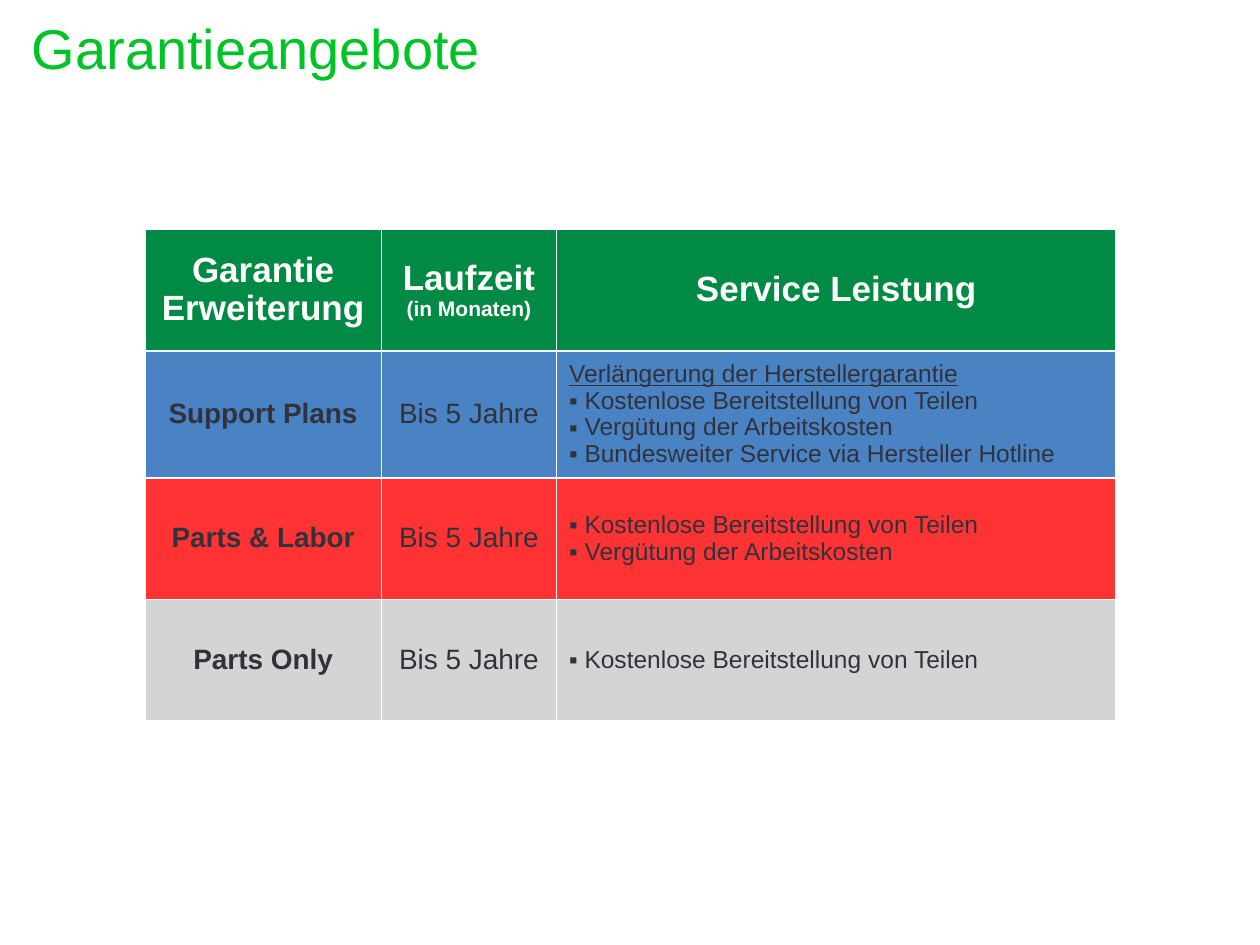
from pptx import Presentation
from pptx.dml.color import RGBColor
from pptx.enum.text import MSO_ANCHOR, PP_ALIGN
from pptx.oxml.ns import qn
from pptx.util import Cm, Pt
from lxml import etree

MIDDLE = MSO_ANCHOR.MIDDLE
CENTER, LEFT = PP_ALIGN.CENTER, PP_ALIGN.LEFT

LIME = RGBColor(0x00, 0xC4, 0x25)
GREEN = RGBColor(0x00, 0x8A, 0x44)
BLUE = RGBColor(0x1C, 0x64, 0xB4)
RED = RGBColor(0xFF, 0x00, 0x00)
GRAY = RGBColor(0xCA, 0xCA, 0xCA)
WHITE = RGBColor(0xFF, 0xFF, 0xFF)
DARK = RGBColor(0x32, 0x32, 0x3C)

FONT = "Arial"
LINE_SPACING = 0.97
BULLET_INDENT = Cm(0.31)

STYLES = {
    "title": {"size": Pt(32), "color": LIME},
    "header": {"size": Pt(20), "color": WHITE, "bold": True, "align": CENTER},
    "unit": {"size": Pt(12), "color": WHITE, "bold": True, "align": CENTER},
    "plan": {"size": Pt(16), "color": DARK, "bold": True, "align": CENTER},
    "term": {"size": Pt(16), "color": DARK, "align": CENTER},
    "heading": {"size": Pt(14), "color": DARK, "underline": True},
    "bullet": {"size": Pt(14), "color": DARK},
}

TITLE = "Garantieangebote"
HEADERS = [
    [("header", "Garantie"), ("header", "Erweiterung")],
    [("header", "Laufzeit"), ("unit", "(in Monaten)")],
    [("header", "Service Leistung")],
]
TERM = "Bis 5 Jahre"
PARTS = ("bullet", "Kostenlose Bereitstellung von Teilen")
LABOR = ("bullet", "Vergütung der Arbeitskosten")
OFFERS = [
    ("Support Plans", BLUE, [
        ("heading", "Verlängerung der Herstellergarantie"),
        PARTS,
        LABOR,
        ("bullet", "Bundesweiter Service via Hersteller Hotline"),
    ]),
    ("Parts & Labor", RED, [PARTS, LABOR]),
    ("Parts Only", GRAY, [PARTS]),
]
COLUMN_WIDTHS = [Cm(4.77), Cm(3.53), Cm(11.28)]
ROW_HEIGHT = Cm(2.45)


def add_bullet(paragraph):
    properties = paragraph._p.get_or_add_pPr()
    properties.set("marL", str(BULLET_INDENT))
    properties.set("indent", str(-BULLET_INDENT))
    etree.SubElement(properties, qn("a:buFont"), typeface=FONT)
    etree.SubElement(properties, qn("a:buChar"), char="▪")


def write_lines(frame, lines):
    for index, (style_name, text) in enumerate(lines):
        paragraph = frame.add_paragraph() if index else frame.paragraphs[0]
        style = STYLES[style_name]
        paragraph.alignment = style.get("align", LEFT)
        paragraph.line_spacing = LINE_SPACING
        if style_name == "bullet":
            add_bullet(paragraph)
        run = paragraph.add_run()
        run.text = text
        run.font.name = FONT
        run.font.color.rgb = style["color"]
        for attribute in ("size", "bold", "underline"):
            setattr(run.font, attribute, style.get(attribute, False))


def add_borders(cell):
    properties = cell._tc.get_or_add_tcPr()
    for side in ("lnL", "lnR", "lnT", "lnB"):
        line = etree.SubElement(properties, qn(f"a:{side}"), w=str(Pt(1)))
        fill = etree.SubElement(line, qn("a:solidFill"))
        etree.SubElement(fill, qn("a:srgbClr"), val=str(WHITE))


def fill_cell(cell, color, opacity):
    """Fill the cell; opacity is a percentage."""
    cell.fill.solid()
    cell.fill.fore_color.rgb = color
    if opacity < 100:
        rgb = cell._tc.tcPr.find(f"{qn('a:solidFill')}/{qn('a:srgbClr')}")
        etree.SubElement(rgb, qn("a:alpha"), val=str(opacity * 1000))


def add_title(slide):
    frame = slide.shapes.add_textbox(
        Cm(0.64), Cm(0.38), Cm(24.13), Cm(1.27)).text_frame
    settings = {"word_wrap": True, "vertical_anchor": MIDDLE, "margin_left": 0,
                "margin_right": 0, "margin_top": 0, "margin_bottom": 0}
    for attribute, value in settings.items():
        setattr(frame, attribute, value)
    write_lines(frame, [("title", TITLE)])


def add_offer_table(slide):
    rows = [(HEADERS, GREEN, 100)]
    for plan, color, services in OFFERS:
        rows.append(([[("plan", plan)], [("term", TERM)], services], color, 80))

    table = slide.shapes.add_table(
        len(rows), len(COLUMN_WIDTHS), Cm(2.92), Cm(4.63),
        sum(COLUMN_WIDTHS), ROW_HEIGHT * len(rows)).table
    table.horz_banding = False
    for column, width in zip(table.columns, COLUMN_WIDTHS):
        column.width = width
    for row, (contents, color, opacity) in zip(table.rows, rows):
        row.height = ROW_HEIGHT
        for cell, lines in zip(row.cells, contents):
            cell.vertical_anchor = MIDDLE
            add_borders(cell)
            fill_cell(cell, color, opacity)
            write_lines(cell.text_frame, lines)


def main():
    presentation = Presentation()
    presentation.slide_width, presentation.slide_height = Cm(25.4), Cm(19.05)
    slide = presentation.slides.add_slide(presentation.slide_layouts[6])
    add_title(slide)
    add_offer_table(slide)
    presentation.save("out.pptx")


if __name__ == "__main__":
    main()
